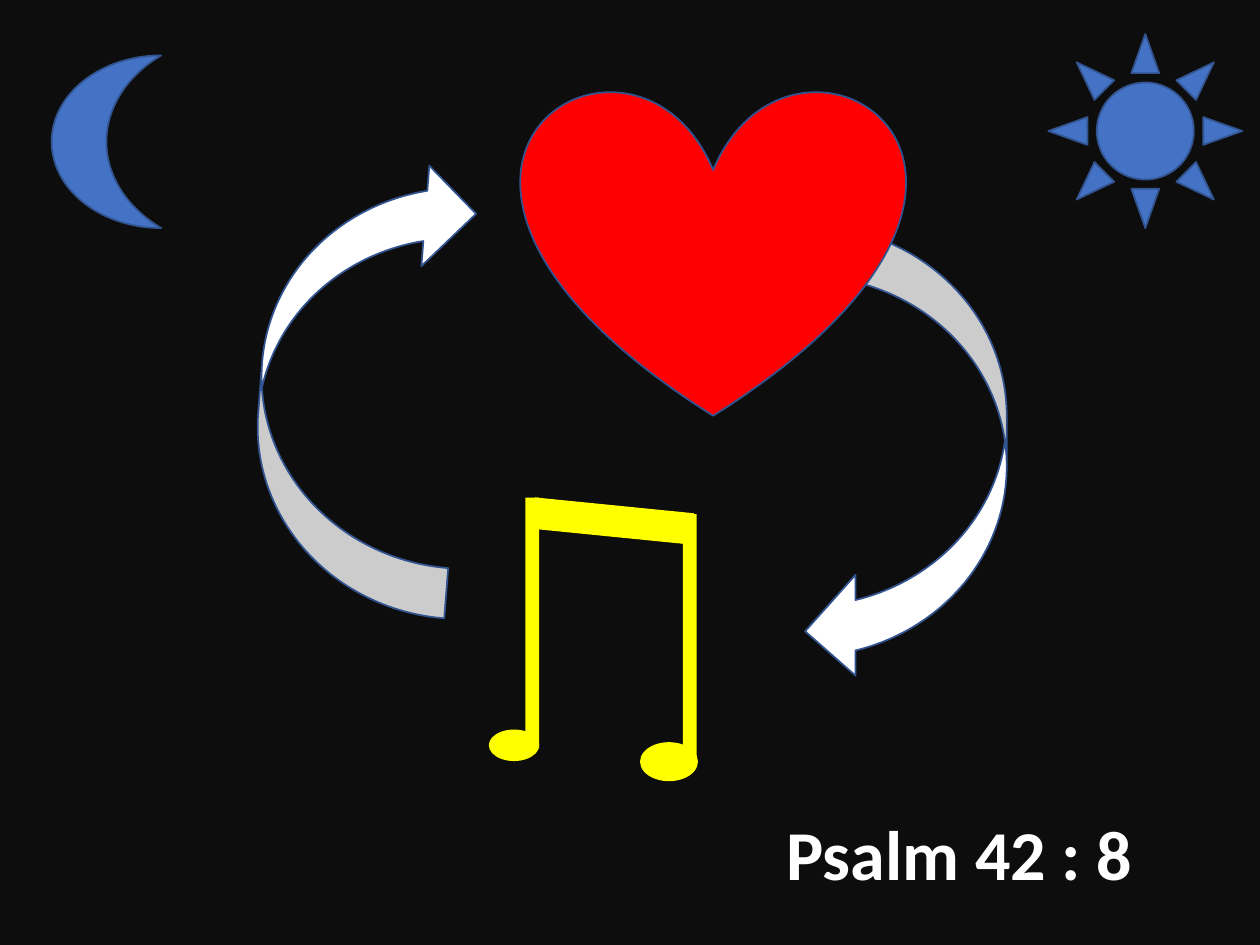
from dataclasses import dataclass

from pptx import Presentation
from pptx.dml.color import RGBColor
from pptx.enum.shapes import MSO_SHAPE as Shape
from pptx.enum.text import MSO_ANCHOR as Anchor, PP_ALIGN as Align
from pptx.util import Inches, Pt

TITLE_ONLY = 5
COLUMNS, ROWS = 100, 75
CELL = Inches(0.1)


@dataclass(frozen=True)
class Theme:
    night: str = "0D0D0D"
    white: str = "FFFFFF"
    heart: str = "FF0000"
    note: str = "FFFF00"
    sky: str = "4472C4"
    outline: str = "325491"
    outline_width: float = 1
    font: str = "Calibri"
    title_size: int = 40


THEME = Theme()


def color(value):
    return RGBColor.from_string(value)


def cells(*counts):
    return [round(count * CELL) for count in counts]


def add_figure(slide, kind, place, fill, rotation=0, outlined=True):
    """Draw a preset shape; place is left, top, width, height in grid cells."""
    figure = slide.shapes.add_shape(kind, *cells(*place))
    figure.shadow.inherit = False
    figure.rotation = rotation
    figure.fill.solid()
    figure.fill.fore_color.rgb = color(fill)
    if outlined:
        figure.line.color.rgb = color(THEME.outline)
        figure.line.width = Pt(THEME.outline_width)
    else:
        figure.line.fill.background()
    return figure


def add_cycle_arrow(slide, left, top, rotation=0):
    add_figure(slide, Shape.CURVED_LEFT_ARROW, (left, top, 16, 36.2),
               THEME.white, rotation)


def add_music_note(slide):
    stem_width, stem_height = 1.1, 19.9
    parts = [
        (Shape.OVAL, (50.8, 58.9, 4.6, 3.1), 0),
        (Shape.OVAL, (38.8, 57.9, 4, 2.5), 0),
        (Shape.RECTANGLE, (47.4, 35, 2.5, 12.7), 275.7),
    ]
    for left, top in ((41.7, 39.5), (54.2, 40.8)):
        parts.append((Shape.RECTANGLE, (left, top, stem_width, stem_height), 0))
    for kind, place, rotation in parts:
        add_figure(slide, kind, place, THEME.note, rotation, outlined=False)


def set_title(slide, text, place):
    title = slide.shapes.title
    title.left, title.top, title.width, title.height = cells(*place)
    frame = title.text_frame
    frame.word_wrap = True
    frame.vertical_anchor = Anchor.TOP
    para = frame.paragraphs[0]
    para.alignment = Align.CENTER
    para.line_spacing = 1.5
    span = para.add_run()
    span.text = text
    span.font.name = THEME.font
    span.font.size = Pt(THEME.title_size)
    span.font.bold = True
    span.font.color.rgb = color(THEME.white)


def main():
    deck = Presentation()
    deck.slide_width, deck.slide_height = cells(COLUMNS, ROWS)
    slide = deck.slides.add_slide(deck.slide_layouts[TITLE_ONLY])
    slide.background.fill.solid()
    slide.background.fill.fore_color.rgb = color(THEME.night)

    add_cycle_arrow(slide, 63.9, 17.9)
    add_figure(slide, Shape.HEART, (41.4, 7, 30.4, 26), THEME.heart)
    add_music_note(slide)
    add_cycle_arrow(slide, 20.7, 12.3, rotation=184.5)
    add_figure(slide, Shape.MOON, (4.1, 4.4, 8.7, 13.7), THEME.sky)
    add_figure(slide, Shape.SUN, (83.2, 2.7, 15.4, 15.4), THEME.sky)
    set_title(slide, "Psalm 42 : 8", (57.9, 60.5, 36.5, 11))

    deck.save("out.pptx")


if __name__ == "__main__":
    main()
